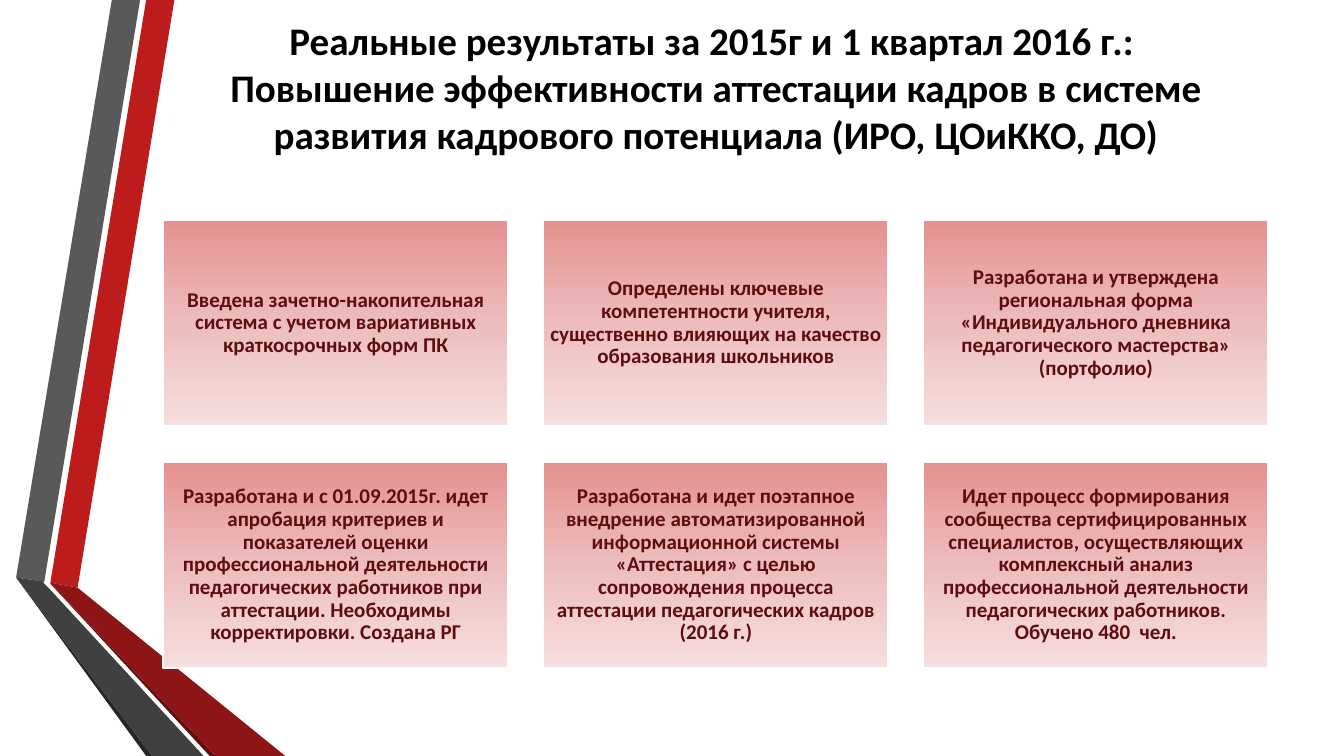
from copy import deepcopy

from pptx import Presentation
from pptx.dml.color import RGBColor
from pptx.enum.shapes import MSO_SHAPE
from pptx.enum.text import MSO_ANCHOR, MSO_AUTO_SIZE, PP_ALIGN
from pptx.oxml.ns import qn
from pptx.util import Inches, Pt

COLORS = {
    "red": "BC1C1C", "grey": "595959", "dark_grey": "404040",
    "grey_edge": "262626", "dark_red": "8D1515", "red_edge": "5E0E0E",
    "title": "000000", "card_text": "5E0E0E", "card_line": "FFFFFF",
}
CARD_GRADIENT = [(0, "E69090"), (0.5, "EDBDBD"), (0.8, "F3D1D1"), (1, "F6DFDF")]

# Ribbon outlines in inches, back to front
RIBBONS = [
    ("red", [(0.5, 5.78), (0.77, 5.83), (1.73, 0), (1.45, 0)]),
    ("grey", [(1.39, 0), (1.11, 0), (0.16, 5.73), (0.44, 5.77)]),
    ("grey_edge", [(0.16, 5.73), (1.45, 7.5), (1.51, 7.5)]),
    ("red_edge", [(0.5, 5.79), (2.08, 7.5), (2.14, 7.5)]),
    ("dark_red", [(0.5, 5.79), (2.14, 7.5), (2.83, 7.5), (0.77, 5.83), (0.5, 5.78)]),
    ("dark_grey", [(2.02, 7.5), (0.48, 5.83), (0.43, 5.78), (0.44, 5.77),
                   (0.16, 5.73), (1.51, 7.5)]),
]

TITLE_LINES = [
    "Реальные результаты за 2015г и 1 квартал 2016 г.: ",
    "Повышение эффективности аттестации кадров в системе "
    "развития кадрового потенциала (ИРО, ЦОиККО, ДО)",
]
CARDS = [
    "Введена зачетно-накопительная система с учетом вариативных "
    "краткосрочных форм ПК",
    "Определены ключевые компетентности учителя, существенно влияющих "
    "на качество образования школьников",
    "Разработана и утверждена региональная форма «Индивидуального дневника "
    "педагогического мастерства» (портфолио)",
    "Разработана и с 01.09.2015г. идет апробация критериев и показателей оценки "
    "профессиональной деятельности педагогических работников при аттестации. "
    "Необходимы корректировки. Создана РГ",
    "Разработана и идет поэтапное внедрение автоматизированной информационной "
    "системы «Аттестация» с целью сопровождения процесса аттестации "
    "педагогических кадров (2016 г.)",
    "Идет процесс формирования сообщества сертифицированных специалистов, "
    "осуществляющих комплексный анализ профессиональной деятельности "
    "педагогических работников. Обучено 480  чел.",
]


def rgb(name):
    return RGBColor.from_string(COLORS[name])


def set_attrs(obj, values):
    for name, value in values.items():
        setattr(obj, name, value)


def format_run(r, size, color):
    set_attrs(r.font, {"name": "Calibri", "size": Pt(size), "bold": True})
    r.font.color.rgb = rgb(color)


def add_ribbons(s, left, top):
    for color, points in RIBBONS:
        points = [(Inches(left + x), Inches(top + y)) for x, y in points]
        builder = s.shapes.build_freeform(*points[0], scale=1.0)
        builder.add_line_segments(points[1:], close=True)
        sp = builder.convert_to_shape()
        sp.shadow.inherit = False
        sp.fill.solid()
        sp.fill.fore_color.rgb = rgb(color)
        sp.line.fill.background()


def add_title(s, left, top, width, height):
    sp = s.shapes.title
    set_attrs(sp, {"left": Inches(left), "top": Inches(top),
                   "width": Inches(width), "height": Inches(height)})
    tf = sp.text_frame
    set_attrs(tf, {"word_wrap": True, "auto_size": MSO_AUTO_SIZE.NONE,
                   "vertical_anchor": MSO_ANCHOR.BOTTOM,
                   "margin_top": 0, "margin_bottom": Inches(0.24)})
    p = tf.paragraphs[0]
    p.alignment = PP_ALIGN.CENTER
    for i, line in enumerate(TITLE_LINES):
        if i:
            p.add_line_break()
        r = p.add_run()
        r.text = line
        format_run(r, 27.9, "title")


def fill_gradient(sp):
    sp.fill.gradient()
    sp.fill.gradient_angle = 270
    # A new gradient has two stops: add the rest
    stops = sp._element.spPr.find(qn("a:gradFill")).find(qn("a:gsLst"))
    while len(stops) < len(CARD_GRADIENT):
        stops.append(deepcopy(stops[0]))
    for stop, (position, color) in zip(sp.fill.gradient_stops, CARD_GRADIENT):
        stop.position = position
        stop.color.rgb = RGBColor.from_string(color)


def add_card(s, text, left, top, width, height):
    sp = s.shapes.add_shape(MSO_SHAPE.RECTANGLE, Inches(left), Inches(top),
                            Inches(width), Inches(height))
    sp.shadow.inherit = False
    fill_gradient(sp)
    sp.line.color.rgb = rgb("card_line")
    sp.line.width = Pt(1.25)
    tf = sp.text_frame
    margins = {f"margin_{side}": Inches(0.06)
               for side in ("left", "top", "right", "bottom")}
    set_attrs(tf, {"word_wrap": True, "vertical_anchor": MSO_ANCHOR.MIDDLE, **margins})
    p = tf.paragraphs[0]
    set_attrs(p, {"alignment": PP_ALIGN.CENTER, "line_spacing": 0.9})
    r = p.add_run()
    r.text = text
    format_run(r, 15, "card_text")


def add_card_grid(s, left, top, width, height, cols=3, rows=2, gap=0.35):
    card_w = (width - (cols - 1) * gap) / cols
    card_h = (height - (rows - 1) * gap) / rows
    for i, text in enumerate(CARDS):
        row, col = divmod(i, cols)
        add_card(s, text, left + col * (card_w + gap),
                 top + row * (card_h + gap), card_w, card_h)


def main():
    prs = Presentation()
    prs.slide_width, prs.slide_height = Inches(13.33), Inches(7.5)
    s = prs.slides.add_slide(prs.slide_layouts[5])
    add_ribbons(s, 0, 0)
    add_title(s, 1.62, 0.32, 10.96, 1.48)
    add_card_grid(s, 1.62, 2.18, 10.96, 4.45)
    prs.save("out.pptx")


if __name__ == "__main__":
    main()
